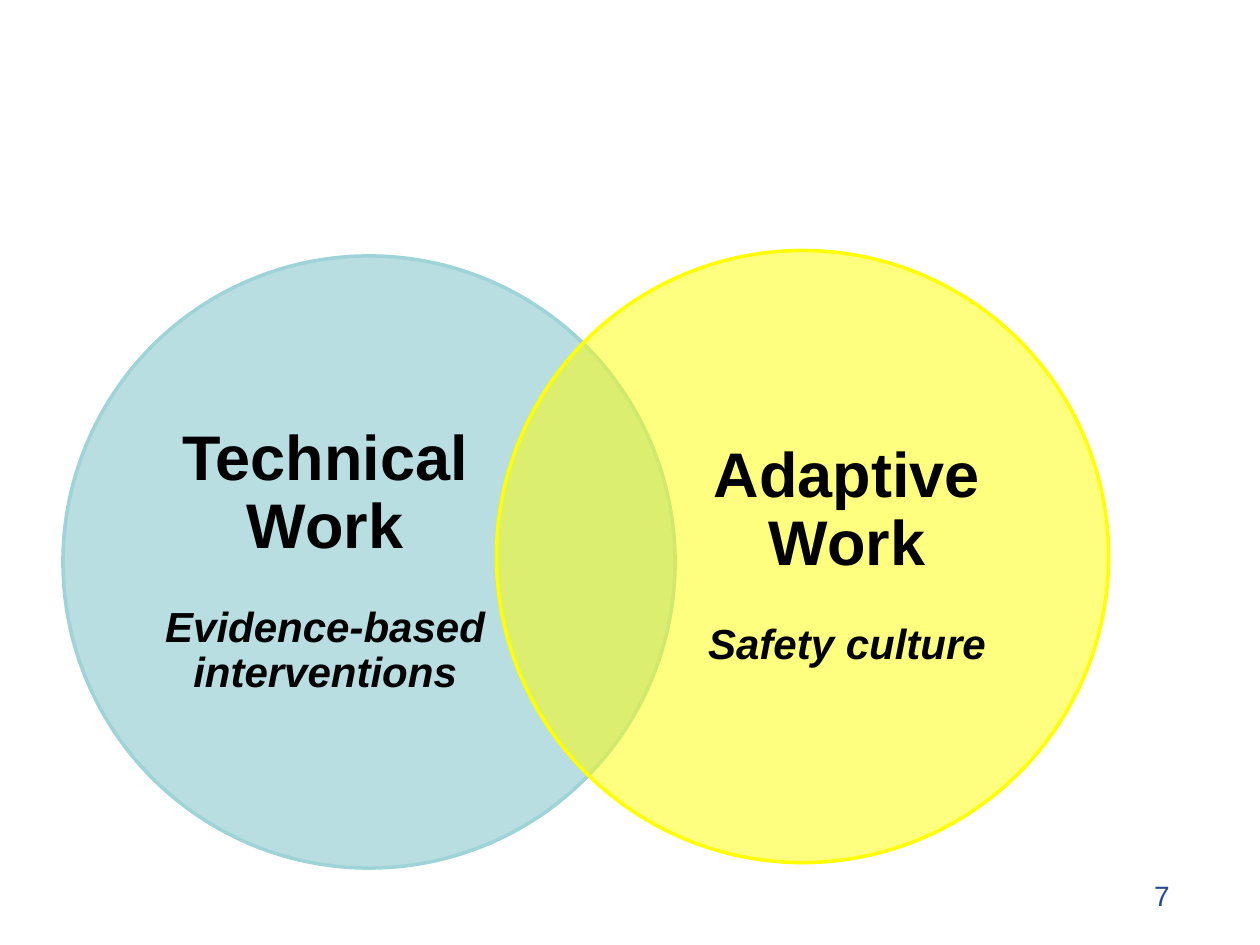
from pptx import Presentation
from pptx.dml.color import RGBColor
from pptx.enum.shapes import MSO_SHAPE as Shape
from pptx.enum.text import MSO_ANCHOR as Anchor, PP_ALIGN as Align
from pptx.oxml import parse_xml
from pptx.oxml.ns import nsdecls
from pptx.util import Cm, Pt

SIZE = 12.34


def paint(fill, tone, alpha=None):
    fill.solid()
    fill.fore_color.rgb = RGBColor.from_string(tone)
    if alpha is not None:
        node = parse_xml(f'<a:alpha {nsdecls("a")} val="{alpha * 1000}"/>')
        fill._xPr.find(".//{*}srgbClr").append(node)


def write(frame, text, size=36, tone="000000", bold=False, slant=False,
          align=Align.CENTER, space=None, before=None, first=False):
    para = frame.paragraphs[0] if first else frame.add_paragraph()
    para.alignment = align
    para.line_spacing = space
    if before is not None:
        para.space_before = Pt(before)
    run = para.add_run()
    run.text = text
    font = run.font
    font.name, font.size = "Arial", Pt(size)
    font.bold, font.italic = bold, slant
    paint(font.fill, tone)


def circle(slide, left, top, tone, edge, inset, heads, note):
    disc = slide.shapes.add_shape(
        Shape.OVAL, Cm(left), Cm(top), Cm(SIZE), Cm(SIZE))
    disc.shadow.inherit = False
    paint(disc.fill, tone, alpha=50)
    paint(disc.line.fill, edge)
    disc.line.width = Pt(2)

    label = slide.shapes.add_textbox(
        Cm(left + inset), Cm(top + 1.45), Cm(7.11), Cm(9.42))
    frame = label.text_frame
    frame.word_wrap = True
    frame.vertical_anchor = Anchor.MIDDLE
    frame.margin_left = frame.margin_right = 0
    frame.margin_top = frame.margin_bottom = 0
    for i, head in enumerate(heads):
        write(frame, head, bold=True, space=0.9, first=i == 0)
    write(frame, note, size=24, bold=True, slant=True, space=0.9, before=25)


def number(slide, left, top, text):
    box = slide.shapes.add_textbox(Cm(left), Cm(top), Cm(1.17), Cm(0.84))
    box.text_frame.word_wrap = True
    write(box.text_frame, text, size=16, tone="254B8E",
          align=Align.RIGHT, first=True)


def main():
    deck = Presentation()
    deck.slide_width, deck.slide_height = Cm(25.4), Cm(19.05)
    slide = deck.slides.add_slide(deck.slide_layouts[6])
    circle(slide, 1.27, 5.16, "72BFC5", "9ED3D7", 1.73,
           ["Technical", "Work"], "Evidence-based interventions")
    circle(slide, 10.01, 5.05, "FFFF00", "FFFF00", 3.51,
           ["Adaptive", "Work"], "Safety culture")
    number(slide, 22.66, 17.58, "7")
    deck.save("out.pptx")


if __name__ == "__main__":
    main()
